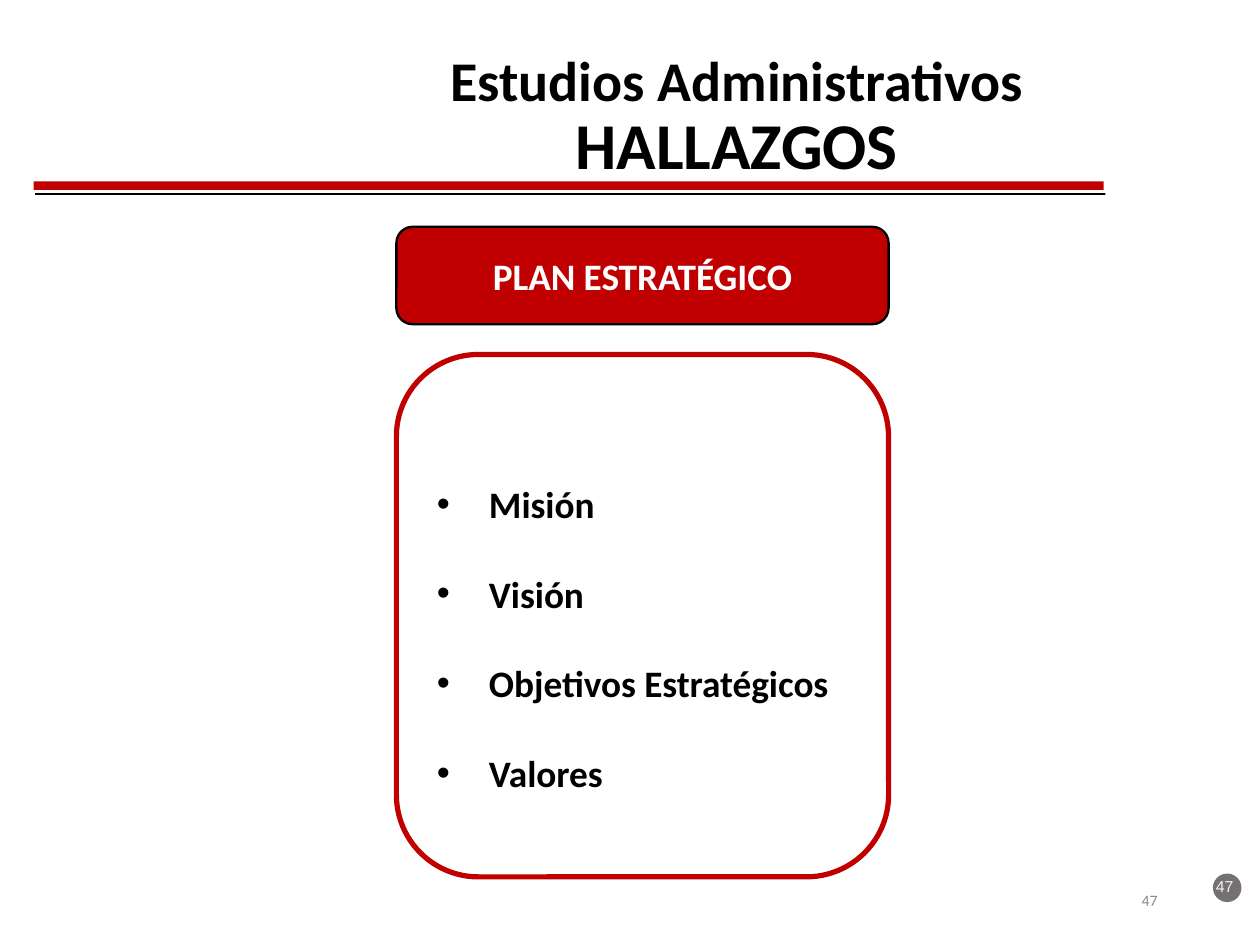
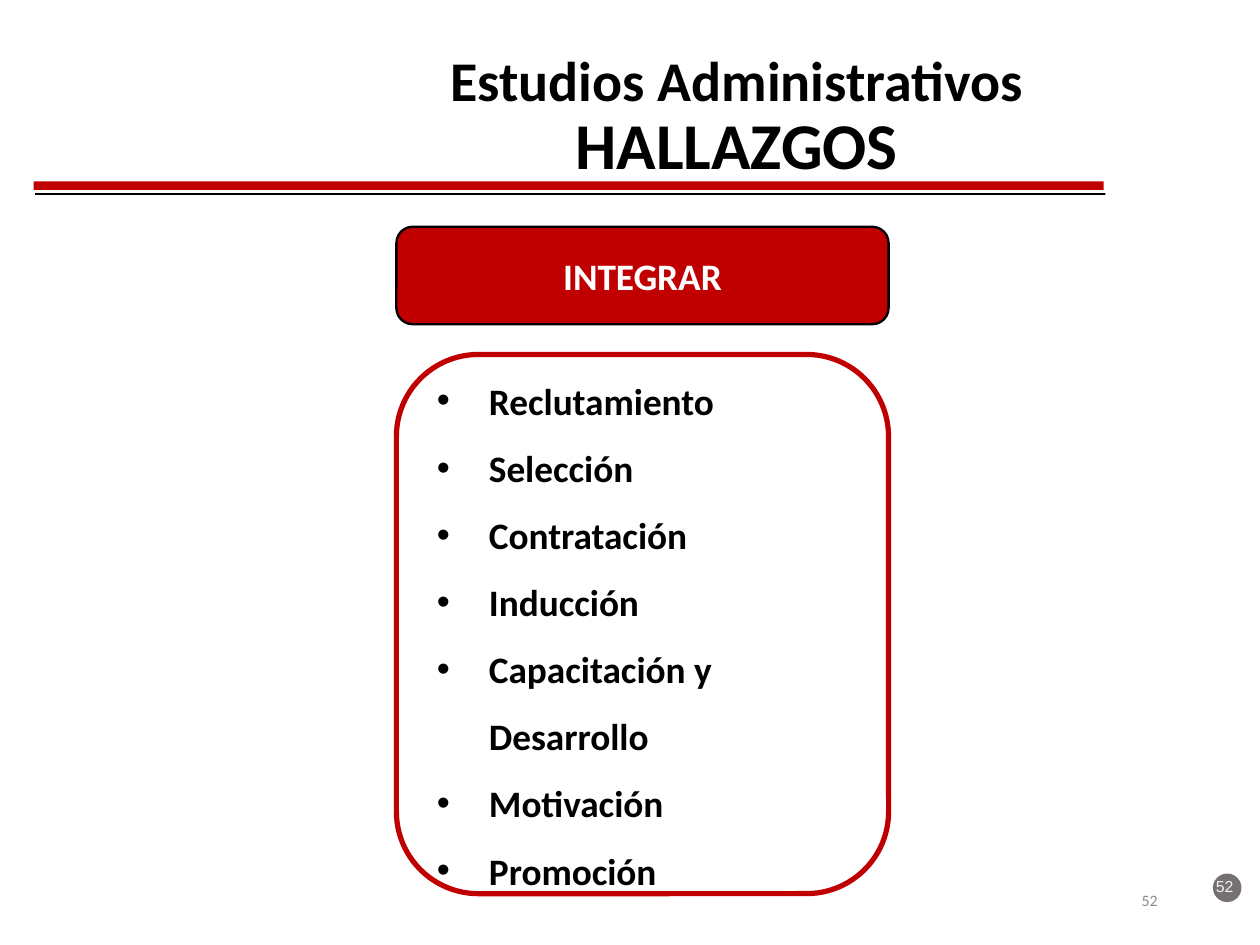
from dataclasses import dataclass

from lxml import etree
from pptx import Presentation
from pptx.dml.color import RGBColor
from pptx.enum.shapes import MSO_SHAPE
from pptx.enum.text import MSO_ANCHOR, PP_ALIGN
from pptx.oxml.ns import qn
from pptx.util import Inches, Pt

RECT, ROUNDED, OVAL = MSO_SHAPE.RECTANGLE, MSO_SHAPE.ROUNDED_RECTANGLE, MSO_SHAPE.OVAL
LEFT, CENTER, RIGHT, JUSTIFY = (
    PP_ALIGN.LEFT, PP_ALIGN.CENTER, PP_ALIGN.RIGHT, PP_ALIGN.JUSTIFY)
TOP, MIDDLE = MSO_ANCHOR.TOP, MSO_ANCHOR.MIDDLE


@dataclass(frozen=True)
class Theme:
    red: str = "C00000"
    black: str = "000000"
    white: str = "FFFFFF"
    badge: str = "767171"
    badge_text: str = "F2F2F2"
    footer: str = "8C8C8C"
    font: str = "Calibri"
    badge_font: str = "Arial"
    title_size: float = 24
    subtitle_size: float = 28
    body_size: float = 16
    number_size: float = 6.8


class Deck:
    """Holds the presentation, its theme and the current slide."""

    def __init__(self, theme):
        self.theme = theme
        self.prs = Presentation()
        # Standard 4:3 page
        self.prs.slide_width = Inches(7.5)
        self.prs.slide_height = Inches(7.5 * 3 / 4)
        self.slide = None

    def new_slide(self, number):
        self.slide = self.prs.slides.add_slide(self.prs.slide_layouts[6])
        self.badge(number)
        self.header()
        self.footer(number)

    # Basic elements
    def shape(self, kind, box, fill, line=None, weight=1):
        shape = self.slide.shapes.add_shape(kind, *map(Inches, box))
        shape.shadow.inherit = False
        shape.fill.solid()
        shape.fill.fore_color.rgb = RGBColor.from_string(fill)
        if line:
            shape.line.color.rgb = RGBColor.from_string(line)
            shape.line.width = Pt(weight)
        else:
            shape.line.fill.background()
        return shape

    def text_box(self, box, anchor=MIDDLE, wrap=True):
        frame = self.slide.shapes.add_textbox(*map(Inches, box)).text_frame
        frame.word_wrap, frame.vertical_anchor = wrap, anchor
        return frame

    def run(self, paragraph, text, color, **formats):
        run = paragraph.add_run()
        run.text = text
        style = {"name": self.theme.font, "size": self.theme.body_size, "bold": True}
        style.update(formats)
        style["size"] = Pt(style["size"])
        for name, value in style.items():
            setattr(run.font, name, value)
        run.font.color.rgb = RGBColor.from_string(color)

    def bullet(self, paragraph, indent=0.31):
        props = paragraph._p.get_or_add_pPr()
        props.set("marL", str(Inches(indent)))
        props.set("indent", str(-Inches(indent)))
        etree.SubElement(props, qn("a:buFont")).set("typeface", "Arial")
        etree.SubElement(props, qn("a:buChar")).set("char", "•")

    # Parts shared by every slide
    def badge(self, number):
        t = self.theme
        self.shape(OVAL, (7.22, 5.2, 0.17, 0.17), t.badge)
        frame = self.text_box((7.14, 5.19, 0.3, 0.17), TOP, wrap=False)
        frame.margin_left = frame.margin_right = Inches(0.06)
        frame.margin_top = frame.margin_bottom = Inches(0.03)
        page = frame.paragraphs[0]
        page.alignment = CENTER
        self.run(page, str(number), t.badge_text, name=t.badge_font,
                 size=t.number_size, bold=False)

    def header(self):
        t = self.theme
        self.shape(RECT, (0.2, 1.08, 6.37, 0.05), t.red)
        self.shape(RECT, (0.21, 1.15, 6.37, 0.01), t.black)
        title = self.text_box((1.78, 0.16, 5.21, 1.09)).paragraphs[0]
        title.alignment, title.line_spacing = CENTER, 0.9
        self.run(title, "Estudios Administrativos", t.black, size=t.title_size)
        title.add_line_break()
        self.run(title, "HALLAZGOS", t.black, size=t.subtitle_size)

    def footer(self, number):
        t = self.theme
        page = self.text_box((5.3, 5.21, 1.69, 0.3)).paragraphs[0]
        page.alignment = RIGHT
        self.run(page, str(number), t.footer, size=t.number_size, bold=False)

    # Findings: a heading over a framed list
    def heading(self, text):
        t = self.theme
        frame = self.shape(ROUNDED, (2.36, 1.35, 2.93, 0.58), t.red, t.black).text_frame
        frame.word_wrap, frame.vertical_anchor = True, MIDDLE
        heading = frame.paragraphs[0]
        heading.alignment = CENTER
        self.run(heading, text, t.white)

    def findings(self, items, height, spacing, alignment):
        t = self.theme
        panel = self.shape(ROUNDED, (2.36, 2.11, 2.93, height), t.white, t.red, 2.25)
        frame = panel.text_frame
        frame.word_wrap, frame.vertical_anchor = True, MIDDLE
        for index, item in enumerate(items):
            finding = frame.add_paragraph() if index else frame.paragraphs[0]
            self.bullet(finding)
            finding.alignment, finding.line_spacing = alignment, spacing
            self.run(finding, item, t.black)


SLIDES = [
    (47, "PLAN ESTRATÉGICO",
     ["Misión", "Visión", "Objetivos Estratégicos", "Valores"],
     {"height": 3.11, "spacing": 2.0, "alignment": JUSTIFY}),
    (52, "INTEGRAR",
     ["Reclutamiento", "Selección", "Contratación", "Inducción",
      "Capacitación y Desarrollo", "Motivación", "Promoción"],
     {"height": 3.21, "spacing": 1.5, "alignment": LEFT}),
]


def main():
    deck = Deck(Theme())
    for number, topic, items, layout in SLIDES:
        deck.new_slide(number)
        deck.heading(topic)
        deck.findings(items, **layout)
    deck.prs.save("out.pptx")


if __name__ == "__main__":
    main()
